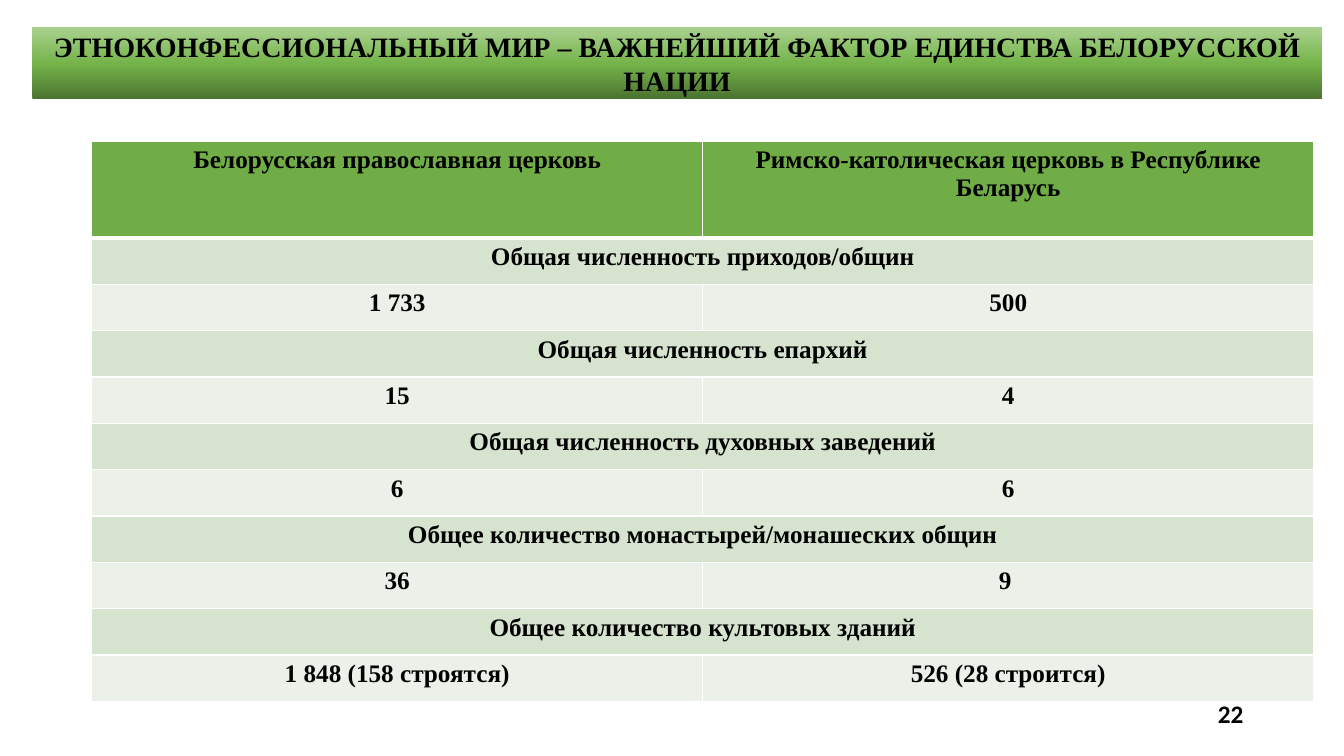
"""Build the slide comparing two churches in Belarus."""
from copy import deepcopy
from dataclasses import dataclass

from lxml import etree
from pptx import Presentation
from pptx.dml.color import RGBColor
from pptx.enum import shapes, text
from pptx.oxml import ns
from pptx import util as u

PX = 9144


@dataclass(frozen=True)
class Theme:
    serif: str = "Times New Roman"
    sans: str = "Calibri"
    ink: str = "000000"
    line: str = "FFFFFF"
    head: str = "70AD47"
    topic: str = "D5E3CF"
    value: str = "EBF1E9"
    ramp: tuple = ((0, "4B7430"), (0.48, "74B349"), (1, "A9D18E"))
    title: int = 20
    body: int = 18


@dataclass(frozen=True)
class Box:
    left: int
    top: int
    width: int
    height: int

    def emu(self) -> list[int]:
        return [n * PX for n in (self.left, self.top, self.width, self.height)]


@dataclass(frozen=True)
class Topic:
    name: str
    east: str
    west: str


THEME = Theme()
TITLE = Box(32, 27, 1279, 71)
GRID = Box(91, 140, 1212, 556)
PAGE = Box(943, 688, 300, 40)
HEAD, ROW = 96, 46
HEADS = ("Белорусская православная церковь",
         "Римско-католическая церковь в Республике Беларусь")
TOPICS = (
    Topic("Общая численность приходов/общин", "1 733", "500"),
    Topic("Общая численность епархий", "15", "4"),
    Topic("Общая численность духовных заведений", "6", "6"),
    Topic("Общее количество монастырей/монашеских общин", "36", "9 "),
    Topic("Общее количество культовых зданий", "1 848 (158 строятся)", "526 (28 строится)"),
)


def write(frame, words: str, size: int, face: str, align=text.PP_ALIGN.CENTER) -> None:
    frame.word_wrap = True
    para = frame.paragraphs[0]
    para.alignment = align
    run = para.add_run()
    run.text = words
    style = {"size": u.Pt(size), "name": face, "bold": True}
    for key, val in style.items():
        setattr(run.font, key, val)
    run.font.color.rgb = RGBColor.from_string(THEME.ink)


def edge(cell, side: str, width: int) -> None:
    props = cell._tc.get_or_add_tcPr()
    line = etree.SubElement(props, ns.qn(f"a:ln{side}"), w=str(u.Pt(width)))
    fill = etree.SubElement(line, ns.qn("a:solidFill"))
    etree.SubElement(fill, ns.qn("a:srgbClr"), val=THEME.line)


def draw_title(slide) -> None:
    bar = slide.shapes.add_shape(shapes.MSO_SHAPE.RECTANGLE, *TITLE.emu())
    bar.shadow.inherit = False
    bar.line.fill.background()
    bar.fill.gradient()
    bar.fill.gradient_angle = 90
    stops = bar._element.spPr.find(".//" + ns.qn("a:gsLst"))
    stops.append(deepcopy(stops[-1]))
    for stop, (place, tint) in zip(bar.fill.gradient_stops, THEME.ramp):
        stop.position = place
        stop.color.rgb = RGBColor.from_string(tint)
    bar.text_frame.vertical_anchor = text.MSO_ANCHOR.MIDDLE
    write(bar.text_frame,
          "ЭТНОКОНФЕССИОНАЛЬНЫЙ МИР – ВАЖНЕЙШИЙ ФАКТОР ЕДИНСТВА БЕЛОРУССКОЙ НАЦИИ",
          THEME.title, THEME.serif)


def draw_grid(slide) -> None:
    rows = [(HEADS, THEME.head)]
    for topic in TOPICS:
        rows += [((topic.name,), THEME.topic),
                 ((topic.east, topic.west), THEME.value)]
    table = slide.shapes.add_table(len(rows), len(HEADS), *GRID.emu()).table
    table.first_row = table.horz_banding = False
    for r, (words, tint) in enumerate(rows):
        table.rows[r].height = (ROW if r else HEAD) * PX
        for c in range(len(HEADS)):
            cell = table.cell(r, c)
            widths = {"L": 1, "R": 1, "T": 3 if r == 1 else 1, "B": 1 if r else 3}
            for side, width in widths.items():
                edge(cell, side, width)
            cell.fill.solid()
            cell.fill.fore_color.rgb = RGBColor.from_string(tint)
        if len(words) == 1:
            table.cell(r, 0).merge(table.cell(r, len(HEADS) - 1))
        for c, word in enumerate(words):
            write(table.cell(r, c).text_frame, word, THEME.body, THEME.serif)


def draw_page(slide) -> None:
    frame = slide.shapes.add_textbox(*PAGE.emu()).text_frame
    frame.vertical_anchor = text.MSO_ANCHOR.MIDDLE
    write(frame, "22", THEME.body, THEME.sans, text.PP_ALIGN.RIGHT)


def main() -> None:
    deck = Presentation()
    deck.slide_width, deck.slide_height = 1333 * PX, 750 * PX
    slide = deck.slides.add_slide(deck.slide_layouts[6])
    draw_page(slide)
    draw_title(slide)
    draw_grid(slide)
    deck.save("out.pptx")


if __name__ == "__main__":
    main()
